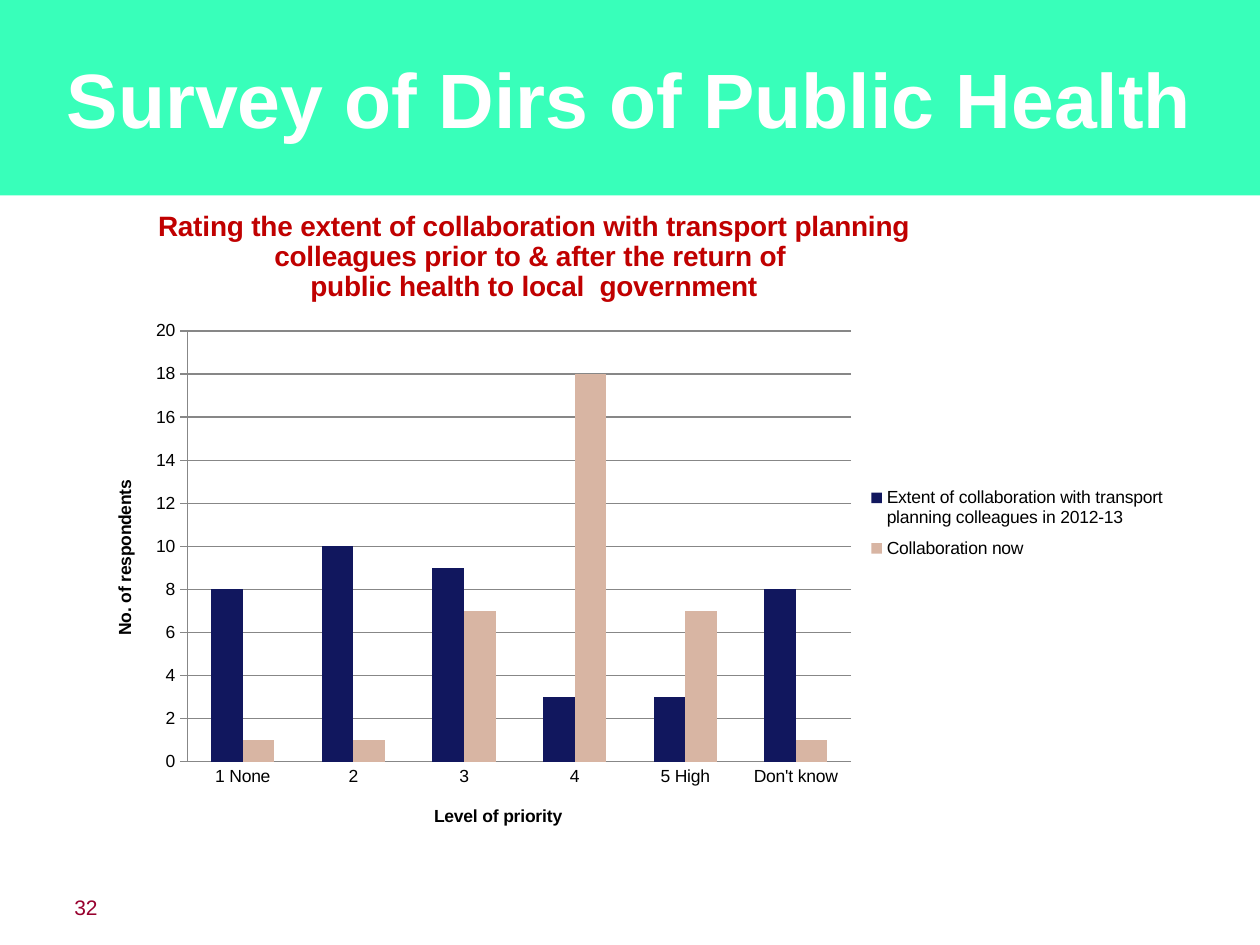
from lxml import etree
from pptx import Presentation
from pptx.chart.data import CategoryChartData
from pptx.dml.color import RGBColor
from pptx.enum.chart import XL_CHART_TYPE, XL_LEGEND_POSITION, XL_TICK_MARK
from pptx.enum.shapes import MSO_SHAPE
from pptx.enum.text import MSO_ANCHOR, MSO_AUTO_SIZE, PP_ALIGN
from pptx.oxml.ns import qn
from pptx.util import Inches, Pt

COLUMNS = XL_CHART_TYPE.COLUMN_CLUSTERED
RIGHT = XL_LEGEND_POSITION.RIGHT
NO_TICK, TICK_OUT = XL_TICK_MARK.NONE, XL_TICK_MARK.OUTSIDE
RECTANGLE = MSO_SHAPE.RECTANGLE
MIDDLE, NO_FIT = MSO_ANCHOR.MIDDLE, MSO_AUTO_SIZE.NONE
LEFT, CENTER = PP_ALIGN.LEFT, PP_ALIGN.CENTER
TITLE_ONLY = 5
WIDTH, HEIGHT = Inches(10), Inches(7.5)
COLORS = {"white": "FFFFFF", "mint": "38FFBA", "heading": "C00000", "number": "98002E",
          "navy": "11175E", "sand": "D8B5A3", "grid": "878787", "black": "000000"}
FORMATS = {
    "title": {"size": Pt(44), "bold": True, "color": "white"},
    "number": {"size": Pt(12), "bold": False, "color": "number"},
    "heading": {"size": Pt(16), "bold": True, "color": "heading"},
    "axis": {"size": Pt(10), "bold": True, "color": "black"},
    "labels": {"size": Pt(10), "bold": False, "color": "black"},
}
CATEGORIES = ["1 None", "2", "3", "4", "5 High", "Don't know"]
SERIES = [
    ("Extent of collaboration with transport planning colleagues in 2012-13",
     (8, 10, 9, 3, 3, 8), "navy"),
    ("Collaboration now", (1, 1, 7, 18, 7, 1), "sand"),
]
HEADING = ("Rating the extent of collaboration with transport planning colleagues "
           "prior to & after the return of \npublic health to local  government")


def paint(fill, name):
    """Give a fill one solid named colour."""
    fill.solid()
    fill.fore_color.rgb = RGBColor.from_string(COLORS[name])


def style_font(font, kind):
    """Apply a named format to a font."""
    font.name = "Arial"
    for name, value in FORMATS[kind].items():
        if name == "color":
            font.color.rgb = RGBColor.from_string(COLORS[value])
        else:
            setattr(font, name, value)


def fill_band(shape, top, height, color, text, kind, align):
    """Turn a shape into a full-width band with one line of text."""
    shape.left, shape.top, shape.width, shape.height = 0, Inches(top), WIDTH, Inches(height)
    paint(shape.fill, color)
    frame = shape.text_frame
    frame.text = text
    frame.auto_size, frame.vertical_anchor, frame.word_wrap = NO_FIT, MIDDLE, True
    para = frame.paragraphs[0]
    para.alignment = align
    style_font(para.runs[0].font, kind)


def place(element, index, inner=False, **shares):
    """Set the manual layout of a chart part in shares of the chart."""
    for old in element.findall(qn("c:layout")):
        element.remove(old)
    layout = etree.Element(qn("c:layout"))
    manual = etree.SubElement(layout, qn("c:manualLayout"))
    if inner:
        etree.SubElement(manual, qn("c:layoutTarget")).set("val", "inner")
    for key in ("xMode", "yMode"):
        etree.SubElement(manual, qn(f"c:{key}")).set("val", "edge")
    for key, share in shares.items():
        etree.SubElement(manual, qn(f"c:{key}")).set("val", str(share))
    element.insert(index, layout)


def write_chart_title(title, text, kind, x, y):
    """Write, format and place the title of a chart or an axis."""
    frame = title.text_frame
    frame.text = text
    for para in frame.paragraphs:
        style_font(para.font, kind)
        for span in para.runs:
            style_font(span.font, kind)
    place(title._element, 1, x=x, y=y)


def style_axis(axis, text, tick, x, y):
    """Format an axis with its line, ticks and title."""
    axis.major_tick_mark, axis.minor_tick_mark = tick, NO_TICK
    paint(axis.format.line.fill, "grid")
    style_font(axis.tick_labels.font, "labels")
    write_chart_title(axis.axis_title, text, "axis", x, y)


def add_survey_chart(page):
    """Add the clustered columns of the survey answers."""
    data = CategoryChartData()
    data.categories = CATEGORIES
    for name, values, _ in SERIES:
        data.add_series(name, values)
    chart = page.shapes.add_chart(COLUMNS, Inches(0.61), Inches(1.47),
                                  Inches(8.78), Inches(5.26), data).chart
    style_font(chart.font, "labels")
    write_chart_title(chart.chart_title, HEADING, "heading", 0.07, 0.03)

    plot = chart.plots[0]
    plot.gap_width, plot.overlap, plot.vary_by_categories = 150, 0, False
    for series, (_, _, color) in zip(plot.series, SERIES):
        paint(series.format.fill, color)
    place(chart._chartSpace.chart.plotArea, 0, inner=True, x=0.1, y=0.22, w=0.6, h=0.65)

    style_axis(chart.category_axis, "Level of priority", NO_TICK, 0.32, 0.93)
    values = chart.value_axis
    values.minimum_scale, values.maximum_scale, values.major_unit = 0, 20, 2
    style_axis(values, "No. of respondents", TICK_OUT, 0.03, 0.44)
    values.axis_title.text_frame._txBody.bodyPr.set("rot", "-5400000")
    paint(values.major_gridlines.format.line.fill, "grid")

    chart.has_legend = True
    legend = chart.legend
    legend.position, legend.include_in_layout = RIGHT, False
    style_font(legend.font, "labels")
    place(legend._element, 1, x=0.71, y=0.44, w=0.28, h=0.14)


def add_footer(page):
    """Add the bottom band with the page number."""
    band = page.shapes.add_shape(RECTANGLE, 0, 0, WIDTH, HEIGHT)
    band.shadow.inherit = False
    band.line.fill.background()
    fill_band(band, 6.9, 0.6, "white", "32", "number", LEFT)
    frame = band.text_frame
    frame.margin_left, frame.margin_top, frame.margin_bottom = Inches(0.59), 0, 0


def main():
    """Build and save the slide."""
    deck = Presentation()
    deck.slide_width, deck.slide_height = WIDTH, HEIGHT
    page = deck.slides.add_slide(deck.slide_layouts[TITLE_ONLY])
    add_footer(page)
    add_survey_chart(page)
    title = page.shapes.title
    fill_band(title, 0, 1.55, "mint", "Survey of Dirs of Public Health", "title", CENTER)
    page.shapes._spTree.append(title._element)
    deck.save("out.pptx")


if __name__ == "__main__":
    main()
